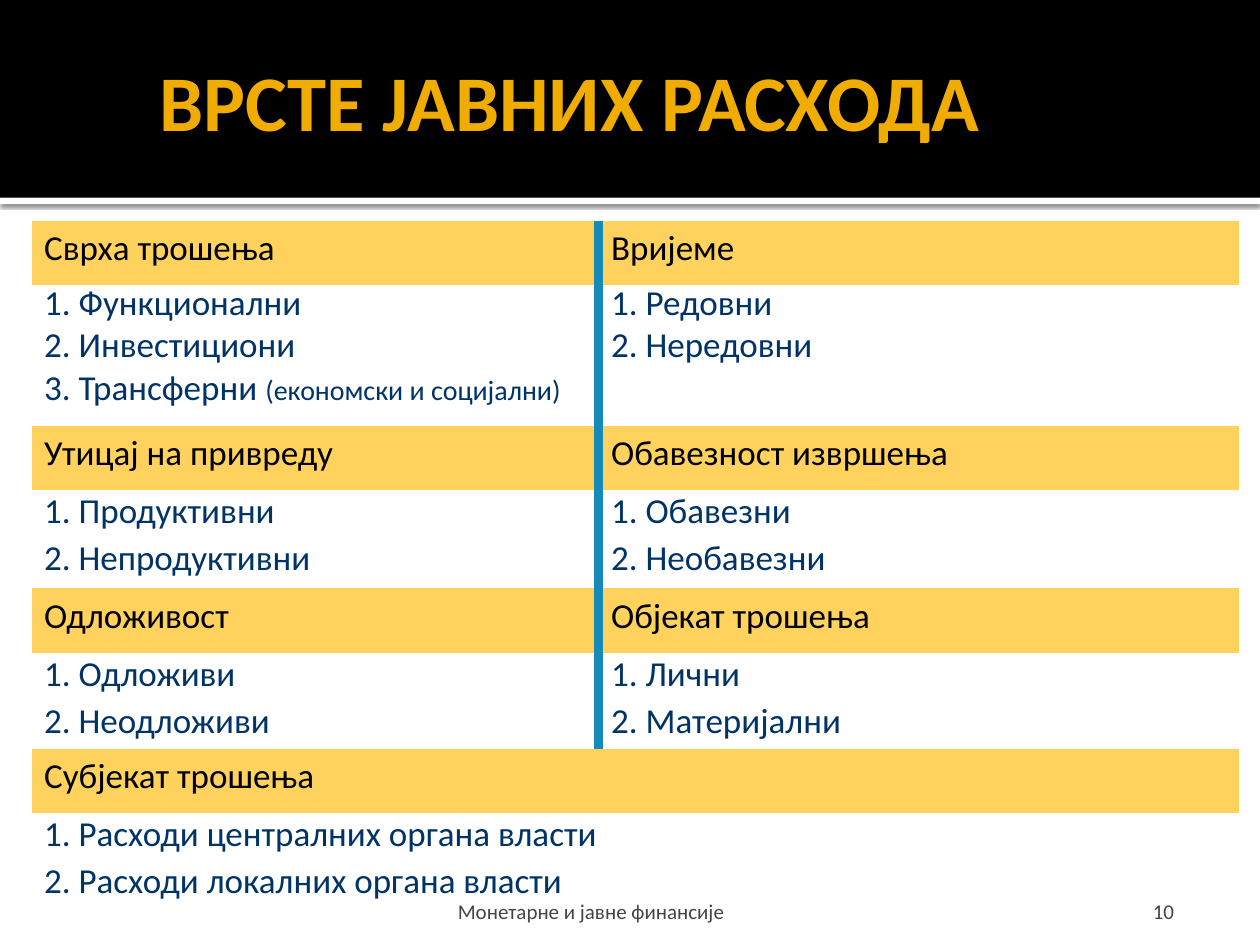
import pptx
import pptx.util
import pptx.dml.color
import pptx.enum.shapes
import pptx.enum.text
import pptx.oxml
import pptx.oxml.ns

Pt = pptx.util.Pt
RGB = pptx.dml.color.RGBColor.from_string
ALIGN = pptx.enum.text.PP_ALIGN
ANCHOR = pptx.enum.text.MSO_ANCHOR
NS = pptx.oxml.ns.nsdecls("a")

THEME = {
    "font": "Calibri",
    "band": "000000", "rule": "FFFFFF", "title": "F0AD00",
    "heading_fill": "FFD25D", "heading": "000000", "item": "003366",
    "divider": "168BBA", "footer": "454545",
    "title_size": 45, "table_size": 20, "note_size": 16, "footer_size": 12,
}


def style(p, size, color, bold=False):
    p.font.name = THEME["font"]
    p.font.size = Pt(THEME[size])
    p.font.color.rgb = RGB(THEME[color])
    p.font.bold = bold


def add_border(cell, side):
    cell._tc.get_or_add_tcPr().insert(0, pptx.oxml.parse_xml(
        f'<a:{side} {NS} w="{Pt(6)}"><a:solidFill><a:srgbClr val="{THEME["divider"]}"/>'
        f'</a:solidFill></a:{side}>'))


prs = pptx.Presentation()
prs.slide_width, prs.slide_height = Pt(720), Pt(540)
s = prs.slides.add_slide(prs.slide_layouts[5])

for name, top, height in [("rule", 113, 3.6), ("band", 0, 113)]:
    sp = s.shapes.add_shape(pptx.enum.shapes.MSO_SHAPE.RECTANGLE, 0, Pt(top), Pt(720), Pt(height))
    sp.shadow.inherit = False
    sp.fill.solid()
    sp.fill.fore_color.rgb = RGB(THEME[name])
    sp.line.fill.background()
    if name == "rule":
        effects = sp._element.spPr.find(pptx.oxml.ns.qn("a:effectLst"))
        effects.append(pptx.oxml.parse_xml(
            f'<a:outerShdw {NS} blurRad="{Pt(2.5)}" dist="{Pt(0.8)}" dir="5400000" algn="tl" rotWithShape="0">'
            '<a:srgbClr val="000000"><a:alpha val="60000"/></a:srgbClr></a:outerShdw>'))

for text, left, width, inset, align in [
    ("Монетарне и јавне финансије", 258, 228, 3.6, ALIGN.LEFT),
    ("10", 528, 150, 7.2, ALIGN.RIGHT),
]:
    tf = s.shapes.add_textbox(Pt(left), Pt(504), Pt(width), Pt(24)).text_frame
    tf.word_wrap = True
    tf.vertical_anchor = ANCHOR.BOTTOM
    tf.margin_left = tf.margin_right = Pt(inset)
    tf.margin_bottom = 0
    p = tf.paragraphs[0]
    p.text = text
    p.alignment = align
    style(p, "footer_size", "footer")

title = s.shapes.title
s.shapes._spTree.append(title._element)
title.left, title.top, title.width, title.height = Pt(84), Pt(18), Pt(594), Pt(78)
tf = title.text_frame
tf.vertical_anchor = ANCHOR.MIDDLE
tf.margin_right = Pt(3.6)
p = tf.paragraphs[0]
p.text = "ВРСТЕ ЈАВНИХ РАСХОДА"
p.alignment = ALIGN.LEFT
style(p, "title_size", "title", bold=True)

HEADING = 1
rows = [
    (36.7, HEADING, ["Сврха трошења", "Вријеме"]),
    (24.2, 0.7, ["1. Функционални", "1. Редовни"]),
    (24.2, 0.7, ["2. Инвестициони", "2. Нередовни"]),
    (32, 0.7, ["3. Трансферни |(економски и социјални)", ""]),
    (36.7, HEADING, ["Утицај на привреду", "Обавезност извршења"]),
    (26.7, 0.8, ["1. Продуктивни", "1. Обавезни"]),
    (29.3, 0.8, ["2. Непродуктивни", "2. Необавезни"]),
    (36.7, HEADING, ["Одложивост", "Објекат трошења"]),
    (26.7, 0.8, ["1. Одложиви", "1. Лични"]),
    (28.2, 0.8, ["2. Неодложиви", "2. Материјални"]),
    (36.7, HEADING, ["Субјекат трошења"]),
    (26.7, 0.8, ["1. Расходи централних органа власти"]),
    (26.7, 0.8, ["2. Расходи локалних органа власти"]),
]
frame = s.shapes.add_table(len(rows), 2, Pt(18), Pt(126), Pt(690), Pt(sum(row[0] for row in rows)))
table = frame.table
table.first_row = table.horz_banding = False
table._tbl.tblPr.find(pptx.oxml.ns.qn("a:tableStyleId")).text = "{2D5ABB26-0587-4C30-8999-92F81FD0307C}"
table.columns[0].width, table.columns[1].width = Pt(324), Pt(366)

for i, (height, spacing, texts) in enumerate(rows):
    table.rows[i].height = Pt(height)
    if len(texts) == 1:
        table.cell(i, 0).merge(table.cell(i, 1))
    for j, text in enumerate(texts):
        cell = table.cell(i, j)
        if spacing == HEADING:
            cell.fill.solid()
            cell.fill.fore_color.rgb = RGB(THEME["heading_fill"])
        else:
            cell.fill.background()
        if len(texts) == 2:
            add_border(cell, ["lnR", "lnL"][j])
        p = cell.text_frame.paragraphs[0]
        p.line_spacing = float(spacing)
        style(p, "table_size", "heading" if spacing == HEADING else "item")
        main, _, note = text.partition("|")
        if main:
            p.add_run().text = main
        if note:
            r = p.add_run()
            r.text = note
            r.font.size = Pt(THEME["note_size"])

prs.save("out.pptx")
